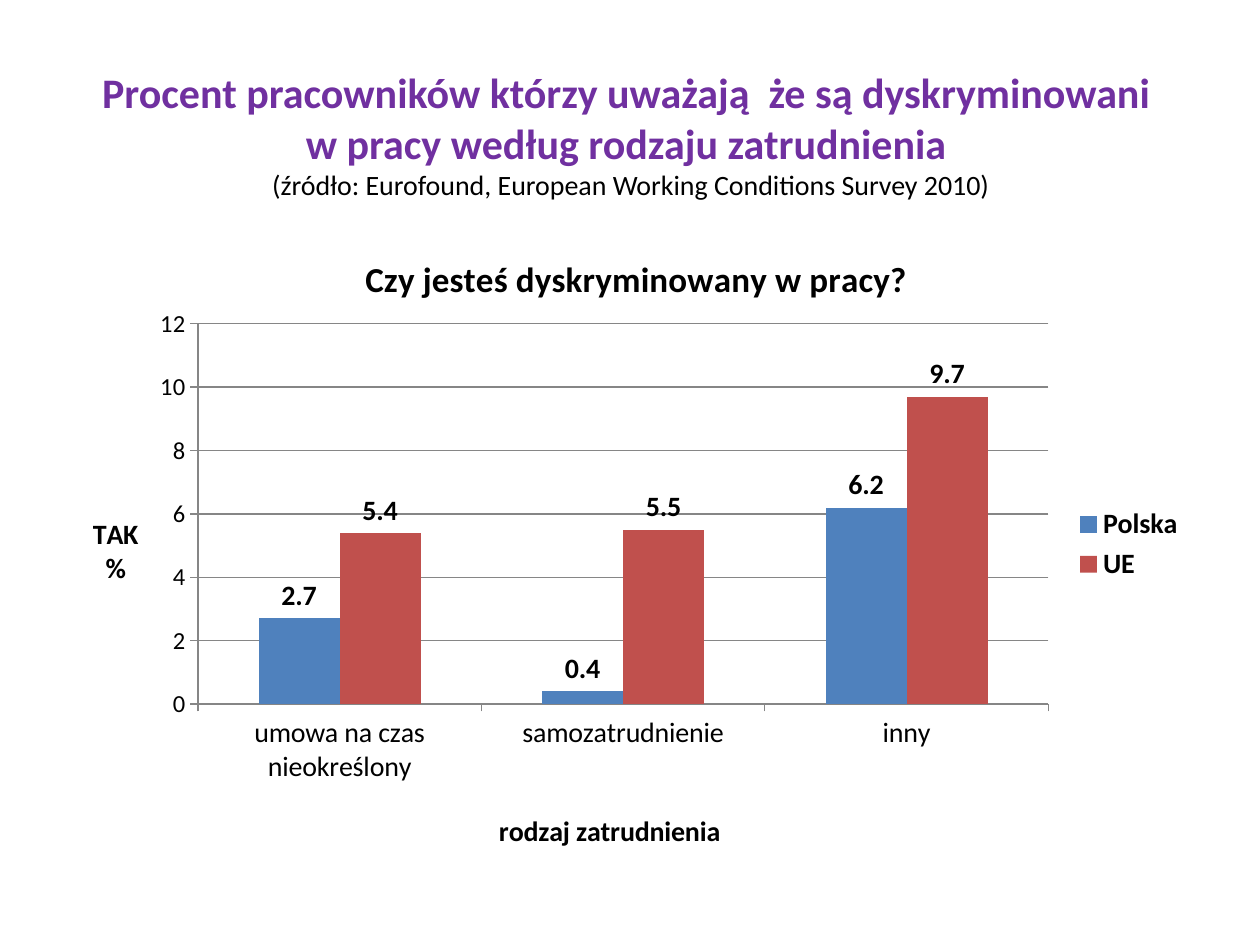
from dataclasses import dataclass

from pptx import Presentation
from pptx.chart.data import CategoryChartData
from pptx.dml.color import RGBColor
from pptx.enum.chart import XL_CHART_TYPE, XL_LABEL_POSITION, XL_LEGEND_POSITION, XL_TICK_MARK
from pptx.enum.text import MSO_ANCHOR, PP_ALIGN
from pptx.oxml import parse_xml
from pptx.oxml.ns import nsdecls, qn
from pptx.util import Emu, Pt

SCALE = 914400 // 126
CHART_FRAME = (63, 220, 1134, 649)


@dataclass(frozen=True)
class Theme:
    font: str = "Calibri"
    heading: str = "7030A0"
    ink: str = "000000"
    grid: str = "868686"
    poland: str = "4F81BD"
    union: str = "C0504D"
    heading_size: int = 24
    chart_title_size: int = 20
    label_size: int = 16
    scale_size: int = 14


THEME = Theme()


def px(length):
    return Emu(length * SCALE)


def apply(target, values):
    for name, value in values.items():
        setattr(target, name, value)


def style_font(font, size, color=THEME.ink, bold=False):
    apply(font, {"name": THEME.font, "size": Pt(size), "bold": bold})
    font.color.rgb = RGBColor.from_string(color)


def style_line(line):
    line.color.rgb = RGBColor.from_string(THEME.grid)
    line.width = Pt(0.75)


def add_heading(page, frame, lines, source):
    box = page.shapes.add_textbox(*map(px, frame))
    apply(box.text_frame, {"word_wrap": True, "vertical_anchor": MSO_ANCHOR.MIDDLE})
    para = box.text_frame.paragraphs[0]
    para.alignment = PP_ALIGN.CENTER
    for line in lines:
        span = para.add_run()
        span.text = line
        style_font(span.font, THEME.heading_size, THEME.heading, True)
        para.add_line_break()
    span = para.add_run()
    span.text = source
    style_font(span.font, THEME.label_size)


def place(element, left, top, width=None, height=None):
    chart_left, chart_top, chart_width, chart_height = CHART_FRAME
    settings = [("xMode", "edge"), ("yMode", "edge"),
                ("x", round((left - chart_left) / chart_width, 3)),
                ("y", round((top - chart_top) / chart_height, 3))]
    if width:
        settings.insert(0, ("layoutTarget", "inner"))
        settings += [("w", round(width / chart_width, 3)),
                     ("h", round(height / chart_height, 3))]
    parts = "".join(f'<c:{name} val="{value}"/>' for name, value in settings)
    layout = parse_xml(
        f'<c:layout {nsdecls("c")}><c:manualLayout>{parts}</c:manualLayout></c:layout>')
    existing = element.find(qn("c:layout"))
    if existing is None:
        element.insert(0, layout)
    else:
        element.replace(existing, layout)


def add_title(title, lines, size, left, top):
    frame = title.text_frame
    frame.text = "\n".join(lines)
    for para in frame.paragraphs:
        for span in para.runs:
            style_font(span.font, size, bold=True)
    frame._txBody.bodyPr.set("rot", "0")
    place(title._element, left, top)


def style_axis(axis, size):
    axis.major_tick_mark = XL_TICK_MARK.OUTSIDE
    axis.minor_tick_mark = XL_TICK_MARK.NONE
    style_font(axis.tick_labels.font, size)
    style_line(axis.format.line)


def style_series(series, color):
    apply(series, {"smooth": False} if hasattr(series, "smooth") else {})
    series.format.fill.solid()
    series.format.fill.fore_color.rgb = RGBColor.from_string(color)
    labels = series.data_labels
    apply(labels, {"show_value": True, "position": XL_LABEL_POSITION.OUTSIDE_END})
    style_font(labels.font, THEME.label_size, bold=True)


def add_column_chart(page, categories, groups):
    data = CategoryChartData()
    data.categories = categories
    for name, values, _ in groups:
        data.add_series(name, values)
    chart = page.shapes.add_chart(
        XL_CHART_TYPE.COLUMN_CLUSTERED, *map(px, CHART_FRAME), data).chart
    style_font(chart.font, 10)
    apply(chart, {"has_title": True, "has_legend": True})
    apply(chart.legend, {"position": XL_LEGEND_POSITION.RIGHT, "include_in_layout": False})
    style_font(chart.legend.font, THEME.label_size, bold=True)

    plot = chart.plots[0]
    apply(plot, {"gap_width": 150, "overlap": 0, "vary_by_categories": False})
    for series, (_, _, color) in zip(plot.series, groups):
        style_series(series, color)

    apply(chart.value_axis, {"minimum_scale": 0, "maximum_scale": 12, "major_unit": 2,
                             "has_major_gridlines": True})
    style_line(chart.value_axis.major_gridlines.format.line)
    style_axis(chart.category_axis, THEME.label_size)
    style_axis(chart.value_axis, THEME.scale_size)

    add_title(chart.chart_title, ["Czy jesteś dyskryminowany w pracy?"],
              THEME.chart_title_size, 359, 248)
    add_title(chart.category_axis.axis_title, ["rodzaj zatrudnienia"],
              THEME.label_size, 494, 807)
    add_title(chart.value_axis.axis_title, ["TAK", "%"], THEME.label_size, 89, 512)
    place(chart._chartSpace.chart.plotArea, 198, 324, 850, 380)


def main():
    deck = Presentation()
    apply(deck, {"slide_width": px(1260), "slide_height": px(945)})
    page = deck.slides.add_slide(deck.slide_layouts[6])
    add_heading(page, (64, 55, 1134, 158),
                ["Procent pracowników którzy uważają  że są dyskryminowani ",
                 "w pracy według rodzaju zatrudnienia "],
                "(źródło: Eurofound, European Working Conditions Survey 2010)")
    add_column_chart(page, ["umowa na czas nieokreślony", "samozatrudnienie", "inny"],
                     [("Polska", (2.7, 0.4, 6.2), THEME.poland),
                      ("UE", (5.4, 5.5, 9.7), THEME.union)])
    deck.save("out.pptx")


if __name__ == "__main__":
    main()
